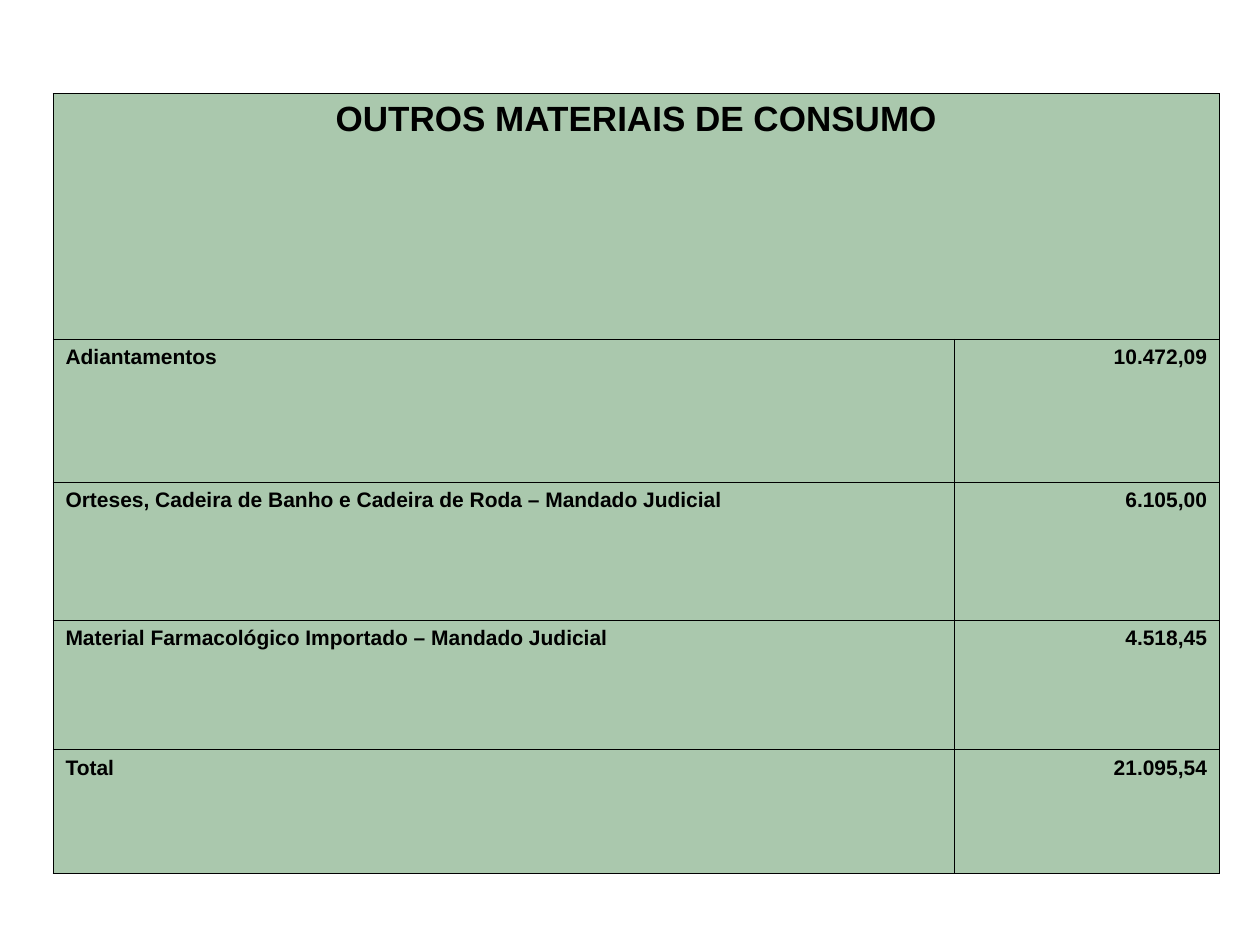
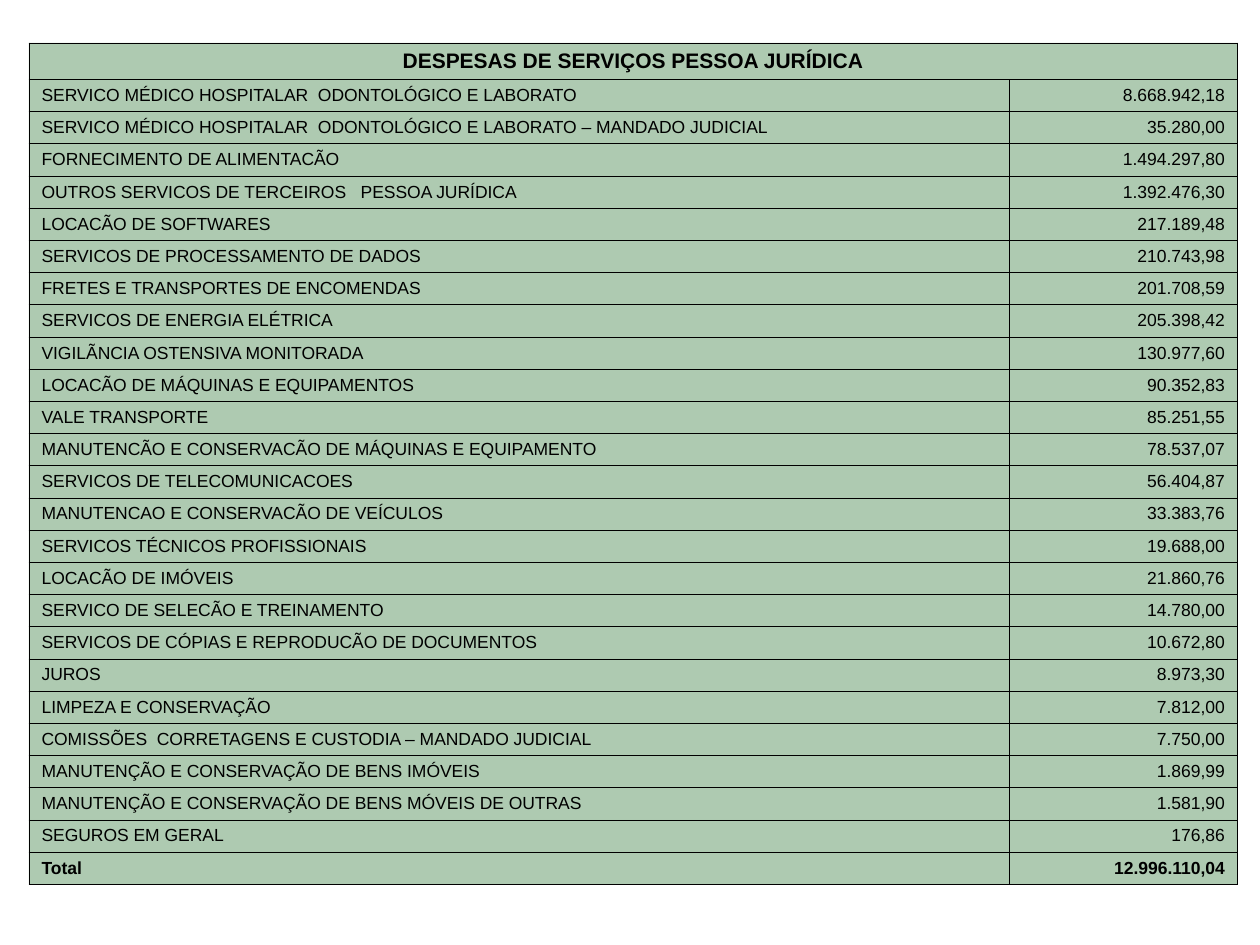
from pptx import Presentation
from pptx import util as u
from pptx.dml.color import RGBColor
from pptx.enum import text
from pptx.oxml import parse_xml
from pptx.oxml.ns import nsdecls, qn

GREEN, BLACK, FONT = "AAC8AD", "000000", "Arial"
LEFT, CENTER, RIGHT = text.PP_ALIGN.LEFT, text.PP_ALIGN.CENTER, text.PP_ALIGN.RIGHT

MATERIALS = [
    ("Adiantamentos", "10.472,09"),
    ("Orteses, Cadeira de Banho e Cadeira de Roda – Mandado Judicial", "6.105,00"),
    ("Material Farmacológico Importado – Mandado Judicial", "4.518,45"),
    ("Total", "21.095,54"),
]
SERVICES = [
    ("SERVICO MÉDICO HOSPITALAR  ODONTOLÓGICO E LABORATO", "8.668.942,18"),
    ("SERVICO MÉDICO HOSPITALAR  ODONTOLÓGICO E LABORATO – MANDADO JUDICIAL", "35.280,00"),
    ("FORNECIMENTO DE ALIMENTACÃO", "1.494.297,80"),
    ("OUTROS SERVICOS DE TERCEIROS   PESSOA JURÍDICA", "1.392.476,30"),
    ("LOCACÃO DE SOFTWARES", "217.189,48"),
    ("SERVICOS DE PROCESSAMENTO DE DADOS", "210.743,98"),
    ("FRETES E TRANSPORTES DE ENCOMENDAS", "201.708,59"),
    ("SERVICOS DE ENERGIA ELÉTRICA", "205.398,42"),
    ("VIGILÃNCIA OSTENSIVA MONITORADA", "130.977,60"),
    ("LOCACÃO DE MÁQUINAS E EQUIPAMENTOS", "90.352,83"),
    ("VALE TRANSPORTE", "85.251,55"),
    ("MANUTENCÃO E CONSERVACÃO DE MÁQUINAS E EQUIPAMENTO", "78.537,07"),
    ("SERVICOS DE TELECOMUNICACOES", "56.404,87"),
    ("MANUTENCAO E CONSERVACÃO DE VEÍCULOS", "33.383,76"),
    ("SERVICOS TÉCNICOS PROFISSIONAIS", "19.688,00"),
    ("LOCACÃO DE IMÓVEIS", "21.860,76"),
    ("SERVICO DE SELECÃO E TREINAMENTO", "14.780,00"),
    ("SERVICOS DE CÓPIAS E REPRODUCÃO DE DOCUMENTOS", "10.672,80"),
    ("JUROS", "8.973,30"),
    ("LIMPEZA E CONSERVAÇÃO", "7.812,00"),
    ("COMISSÕES  CORRETAGENS E CUSTODIA – MANDADO JUDICIAL", "7.750,00"),
    ("MANUTENÇÃO E CONSERVAÇÃO DE BENS IMÓVEIS", "1.869,99"),
    ("MANUTENÇÃO E CONSERVAÇÃO DE BENS MÓVEIS DE OUTRAS", "1.581,90"),
    ("SEGUROS EM GERAL", "176,86"),
    ("Total", "12.996.110,04"),
]
SERVICE_ROW = (6.67 - 0.29) / len(SERVICES)
TABLES = [
    dict(title="OUTROS MATERIAIS DE CONSUMO", items=MATERIALS, at=(0.42, 0.74),
         cols=(7.15, 2.11), rows=[1.95, 1.14, 1.09, 1.03, 0.98],
         title_size=20, size=12, bold=True, border=0.23, opacity=100),
    dict(title="DESPESAS DE SERVIÇOS PESSOA JURÍDICA", items=SERVICES, at=(0.23, 0.34),
         cols=(7.78, 1.81), rows=[0.29] + [SERVICE_ROW] * len(SERVICES),
         title_size=12, size=10, bold=False, border=0.34, opacity=95),
]


def color(value):
    return RGBColor.from_string(value)


def write(cell, content, align, size, bold):
    p = cell.text_frame.paragraphs[0]
    p.alignment = align
    r = p.add_run()
    r.text = content
    for name, value in dict(name=FONT, size=u.Pt(size), bold=bold).items():
        setattr(r.font, name, value)
    r.font.color.rgb = color(BLACK)


def paint(cell, border, opacity):
    cell.fill.solid()
    cell.fill.fore_color.rgb = color(GREEN)
    tc_pr = cell._tc.get_or_add_tcPr()
    if opacity < 100:
        tc_pr.find(".//" + qn("a:srgbClr")).append(
            parse_xml(f'<a:alpha {nsdecls("a")} val="{opacity * 1000}"/>'))
    for i, side in enumerate("LRTB"):
        tc_pr.insert(i, parse_xml(
            f'<a:ln{side} {nsdecls("a")} w="{u.Pt(border)}"><a:solidFill>'
            f'<a:srgbClr val="{BLACK}"/></a:solidFill></a:ln{side}>'))


def add_expenses(prs, spec):
    s = prs.slides.add_slide(prs.slide_layouts[6])
    cols, rows = spec["cols"], spec["rows"]
    box = (*spec["at"], sum(cols), sum(rows))
    table = s.shapes.add_table(len(rows), len(cols), *map(u.Inches, box)).table
    table.first_row = table.horz_banding = False
    for col, width in zip(table.columns, cols):
        col.width = u.Inches(width)
    for row, height in zip(table.rows, rows):
        row.height = u.Inches(height)
    for cell in table.iter_cells():
        paint(cell, spec["border"], spec["opacity"])
    table.cell(0, 0).merge(table.cell(0, 1))
    write(table.cell(0, 0), spec["title"], CENTER, spec["title_size"], True)
    for i, item in enumerate(spec["items"], 1):
        bold = spec["bold"] or item[0] == "Total"
        for j, align in enumerate((LEFT, RIGHT)):
            write(table.cell(i, j), item[j], align, spec["size"], bold)


def main():
    prs = Presentation()
    prs.slide_width, prs.slide_height = u.Inches(10), u.Inches(7.5)
    for spec in TABLES:
        add_expenses(prs, spec)
    prs.save("out.pptx")


if __name__ == "__main__":
    main()
